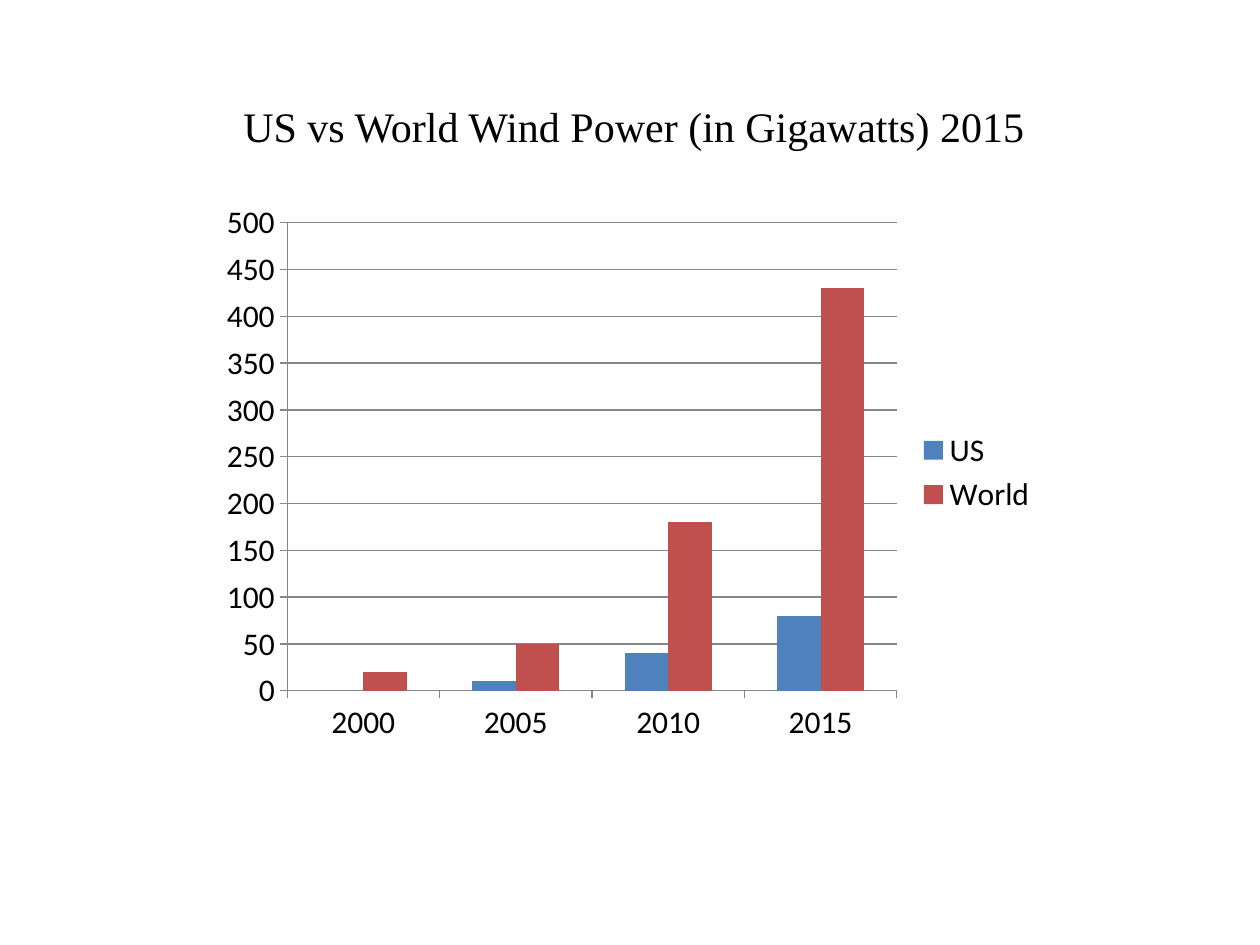
from pptx import Presentation
from pptx.chart.data import CategoryChartData
from pptx.dml.color import RGBColor
from pptx.enum.chart import XL_CHART_TYPE, XL_LEGEND_POSITION, XL_TICK_MARK
from pptx.enum.text import MSO_AUTO_SIZE, PP_ALIGN
from pptx.util import Inches, Pt

COLORS = {"text": "000000", "US": "4F81BD", "World": "C0504D", "line": "868686"}
YEARS = ["2000", "2005", "2010", "2015"]
GIGAWATTS = {"US": [0, 10, 40, 80], "World": [20, 50, 180, 430]}


class Deck:
    title_font = "Times New Roman"
    chart_font = "Calibri"
    grid = 100

    def __init__(self, width, height):
        self.prs = Presentation()
        self.prs.slide_width = Inches(width)
        self.prs.slide_height = Inches(height)
        self.s = self.prs.slides.add_slide(self.prs.slide_layouts[6])

    def box(self, x, y, w, h):
        col = self.prs.slide_width / self.grid
        row = self.prs.slide_height / self.grid
        return int(x * col), int(y * row), int(w * col), int(h * row)

    def color(self, name):
        return RGBColor.from_string(COLORS[name])

    def font(self, font, name, size):
        font.name = name
        font.size = Pt(size)
        font.color.rgb = self.color("text")

    def line(self, line):
        line.color.rgb = self.color("line")
        line.width = Pt(0.75)

    def title(self, text, *area):
        tf = self.s.shapes.add_textbox(*self.box(*area)).text_frame
        tf.word_wrap = False
        tf.auto_size = MSO_AUTO_SIZE.SHAPE_TO_FIT_TEXT
        p = tf.paragraphs[0]
        p.alignment = PP_ALIGN.LEFT
        r = p.add_run()
        r.text = text
        self.font(r.font, self.title_font, 24)

    def columns(self, categories, series, *area):
        data = CategoryChartData()
        data.categories = categories
        for name, values in series.items():
            data.add_series(name, values)
        chart = self.s.shapes.add_chart(
            XL_CHART_TYPE.COLUMN_CLUSTERED, *self.box(*area), data).chart
        chart.has_title = False
        self.font(chart.font, self.chart_font, 18)
        chart.has_legend = True
        chart.legend.position = XL_LEGEND_POSITION.RIGHT
        chart.legend.include_in_layout = False

        plot = chart.plots[0]
        plot.gap_width = 150
        plot.overlap = 0
        plot.vary_by_categories = False
        for ser in plot.series:
            ser.invert_if_negative = False
            ser.format.fill.solid()
            ser.format.fill.fore_color.rgb = self.color(ser.name)

        for axis in (chart.category_axis, chart.value_axis):
            axis.major_tick_mark = XL_TICK_MARK.OUTSIDE
            axis.minor_tick_mark = XL_TICK_MARK.NONE
            self.line(axis.format.line)
        value_axis = chart.value_axis
        value_axis.minimum_scale = 0
        value_axis.maximum_scale = 500
        value_axis.major_unit = 50
        value_axis.has_major_gridlines = True
        self.line(value_axis.major_gridlines.format.line)


def main():
    deck = Deck(10, 7.5)
    deck.columns(YEARS, GIGAWATTS, 16.67, 20.37, 66.67, 59.26)
    deck.title("US vs World Wind Power (in Gigawatts) 2015",
               18.33, 10, 64.63, 6.67)
    deck.prs.save("out.pptx")


if __name__ == "__main__":
    main()
